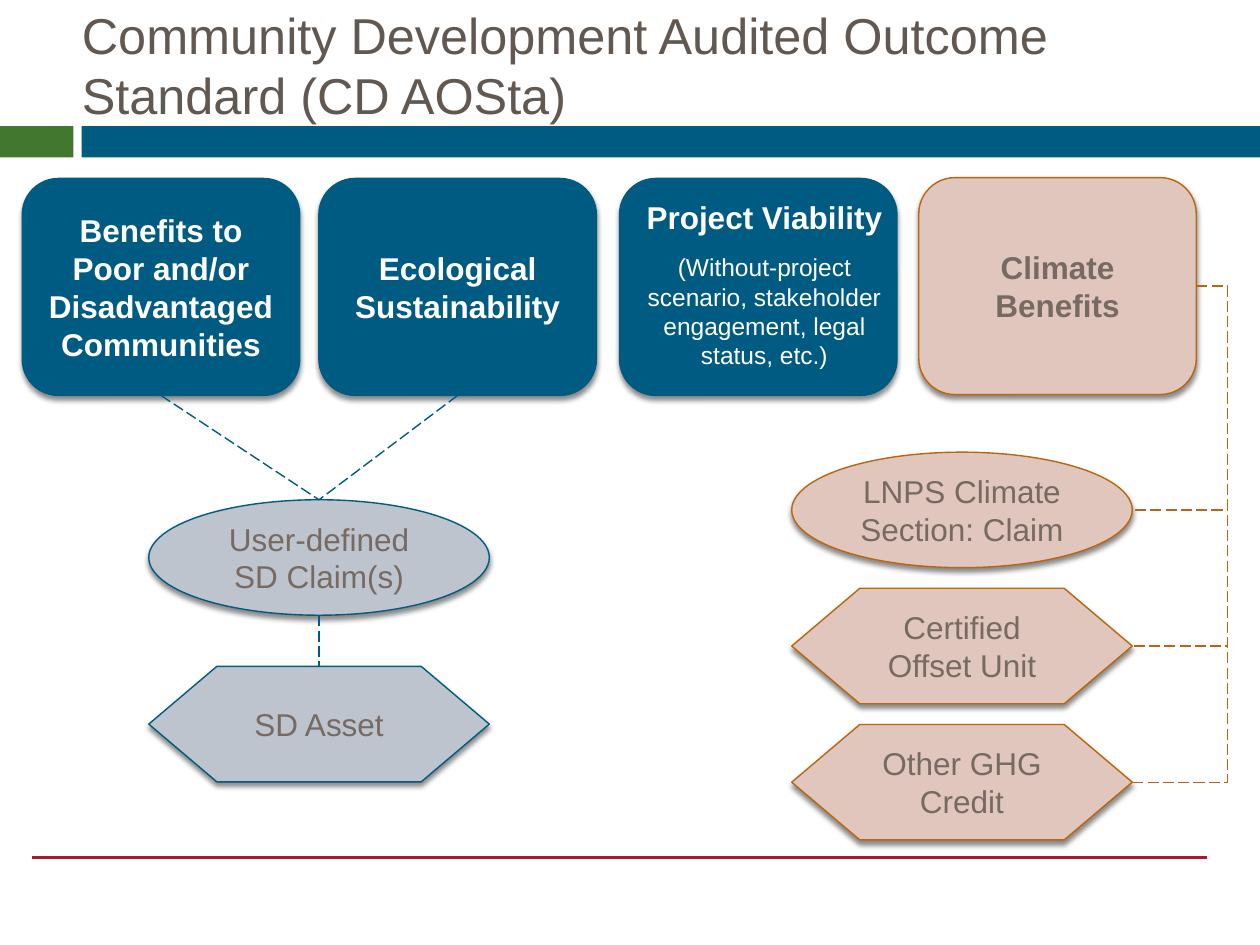
from lxml import etree
from pptx import Presentation
from pptx.dml.color import RGBColor
from pptx.enum.dml import MSO_LINE
from pptx.enum.shapes import MSO_CONNECTOR, MSO_SHAPE
from pptx.enum.text import MSO_ANCHOR, MSO_AUTO_SIZE, PP_ALIGN
from pptx.oxml import parse_xml
from pptx.oxml.ns import nsdecls, qn
from pptx.util import Pt

RECT, ROUNDED = MSO_SHAPE.RECTANGLE, MSO_SHAPE.ROUNDED_RECTANGLE
OVAL, HEXAGON = MSO_SHAPE.OVAL, MSO_SHAPE.FLOWCHART_PREPARATION
STRAIGHT, ELBOW = MSO_CONNECTOR.STRAIGHT, MSO_CONNECTOR.ELBOW
LONG_DASH = MSO_LINE.LONG_DASH
MIDDLE, NO_FIT = MSO_ANCHOR.MIDDLE, MSO_AUTO_SIZE.NONE
CENTER, LEFT = PP_ALIGN.CENTER, PP_ALIGN.LEFT

BLUE, GREEN, RED, ORANGE = "005B82", "427730", "A71932", "BB650E"
PALE_BLUE, PALE_ORANGE = "BDC4CD", "E0C6BD"
WHITE, GRAY, TITLE_GRAY = "FFFFFF", "766A62", "625852"
SHADOW = (
    f'<a:outerShdw {nsdecls("a")} blurRad="{Pt(3)}" dist="{Pt(2.4)}" dir="5400000" '
    'rotWithShape="0"><a:srgbClr val="000000"><a:alpha val="45000"/></a:srgbClr></a:outerShdw>'
)


def add_box(kind, left, top, width, height, fill, line, text, text_color, bold=False):
    """Add a shadowed shape with centred text, one paragraph per line of text."""
    box = slide.shapes.add_shape(kind, Pt(left), Pt(top), Pt(width), Pt(height))
    box.fill.solid()
    box.fill.fore_color.rgb = RGBColor.from_string(fill)
    box.line.color.rgb = RGBColor.from_string(line)
    box.line.width = Pt(0.79)
    box.shadow.inherit = False
    box._element.spPr.find(qn("a:effectLst")).append(parse_xml(SHADOW))
    frame = box.text_frame
    frame.word_wrap = True
    frame.vertical_anchor = MIDDLE
    frame.text = text
    for para in frame.paragraphs:
        para.alignment = CENTER
        para.font.name = "Arial"
        para.font.size = Pt(18)
        para.font.bold = bold
        para.font.color.rgb = RGBColor.from_string(text_color)
    return box


def add_line(kind, x1, y1, x2, y2, color, width=0.79, dash=LONG_DASH):
    line = slide.shapes.add_connector(kind, Pt(x1), Pt(y1), Pt(x2), Pt(y2))
    line.line.color.rgb = RGBColor.from_string(color)
    line.line.width = Pt(width)
    line.line.dash_style = dash
    etree.SubElement(line._element.spPr, qn("a:effectLst"))
    return line


deck = Presentation()
deck.slide_width, deck.slide_height = Pt(720), Pt(540)
slide = deck.slides.add_slide(deck.slide_layouts[5])

# Header band and footer rule
for left, width, color in [(0, 42, GREEN), (46.6, 673.4, BLUE)]:
    band = slide.shapes.add_shape(RECT, Pt(left), Pt(72), Pt(width), Pt(18))
    band.fill.solid()
    band.fill.fore_color.rgb = RGBColor.from_string(color)
    band.line.fill.background()
    band.shadow.inherit = False
add_line(STRAIGHT, 18, 490, 690, 490, RED, 1.75, MSO_LINE.SOLID)

# Title
title = slide.shapes.title
title.left, title.top, title.width, title.height = Pt(39.6), Pt(13.7), Pt(642.2), Pt(46)
title.text_frame.text = "Community Development Audited Outcome Standard (CD AOSta)"
title.text_frame.word_wrap = True
title.text_frame.auto_size = NO_FIT
title.text_frame.vertical_anchor = MIDDLE
heading = title.text_frame.paragraphs[0]
heading.alignment = LEFT
heading.font.name = "Arial"
heading.font.size = Pt(28.8)
heading.font.color.rgb = RGBColor.from_string(TITLE_GRAY)

# Four pillars
PILLAR_WIDTH, PILLAR_HEIGHT = 158.6, 124
pillars = [
    add_box(ROUNDED, left, top, PILLAR_WIDTH, PILLAR_HEIGHT, fill, line, text, color, True)
    for left, top, fill, line, color, text in [
        (12.7, 102, BLUE, BLUE, WHITE, "Benefits to Poor and/or Disadvantaged Communities"),
        (182.2, 102, BLUE, BLUE, WHITE, "Ecological Sustainability"),
        (354, 102, BLUE, BLUE, WHITE,
         "Project Viability\n(Without-project scenario, stakeholder engagement, legal status, etc.)"),
        (525, 101.5, PALE_ORANGE, ORANGE, GRAY, "Climate Benefits"),
    ]
]
viability = pillars[2].text_frame
viability.margin_left, viability.margin_right = Pt(7.2), 0
viability.margin_top, viability.margin_bottom = 0, Pt(3.6)
detail = viability.paragraphs[1]
detail.space_before = Pt(9.5)
detail.font.size = Pt(14)
detail.font.bold = False

# Claim and asset under the first two pillars
NODE_WIDTH, NODE_HEIGHT = 194.6, 66
CLAIM_LEFT, CLAIM_TOP, ASSET_TOP = 85, 285.6, 380.8
claim_center = CLAIM_LEFT + NODE_WIDTH / 2
add_box(OVAL, CLAIM_LEFT, CLAIM_TOP, NODE_WIDTH, NODE_HEIGHT, PALE_BLUE, BLUE,
        "User-defined SD Claim(s)", GRAY)
asset = add_box(HEXAGON, CLAIM_LEFT, ASSET_TOP, NODE_WIDTH, NODE_HEIGHT, PALE_BLUE, BLUE,
                "SD Asset", GRAY)
for pillar in pillars[:2]:
    link = add_line(STRAIGHT, 0, 0, claim_center, CLAIM_TOP, BLUE)
    link.begin_connect(pillar, 2)
link = add_line(STRAIGHT, claim_center, CLAIM_TOP + NODE_HEIGHT, claim_center, ASSET_TOP, BLUE)
link.end_connect(asset, 0)

# Climate outcomes, each reached round the right-hand side
OUTCOME_LEFT, OUTCOME_TOP, OUTCOME_STEP = 452.4, 258.4, 77.8
TRUNK_X = 701.4
climate_right = 525 + PILLAR_WIDTH
climate_middle = 101.5 + PILLAR_HEIGHT / 2
outcome_right = OUTCOME_LEFT + NODE_WIDTH
bend = (climate_right - TRUNK_X) / (climate_right - outcome_right)
for row, (kind, text) in enumerate([
    (OVAL, "LNPS Climate Section: Claim"),
    (HEXAGON, "Certified Offset Unit"),
    (HEXAGON, "Other GHG Credit"),
]):
    top = OUTCOME_TOP + row * OUTCOME_STEP
    add_box(kind, OUTCOME_LEFT, top, NODE_WIDTH, NODE_HEIGHT, PALE_ORANGE, ORANGE, text, GRAY)
    link = add_line(ELBOW, climate_right, climate_middle,
                    outcome_right, top + NODE_HEIGHT / 2, ORANGE)
    guides = link._element.spPr.find(qn("a:prstGeom")).get_or_add_avLst()
    etree.SubElement(guides, qn("a:gd"), name="adj1", fmla=f"val {round(bend * 100000)}")

deck.save("out.pptx")
